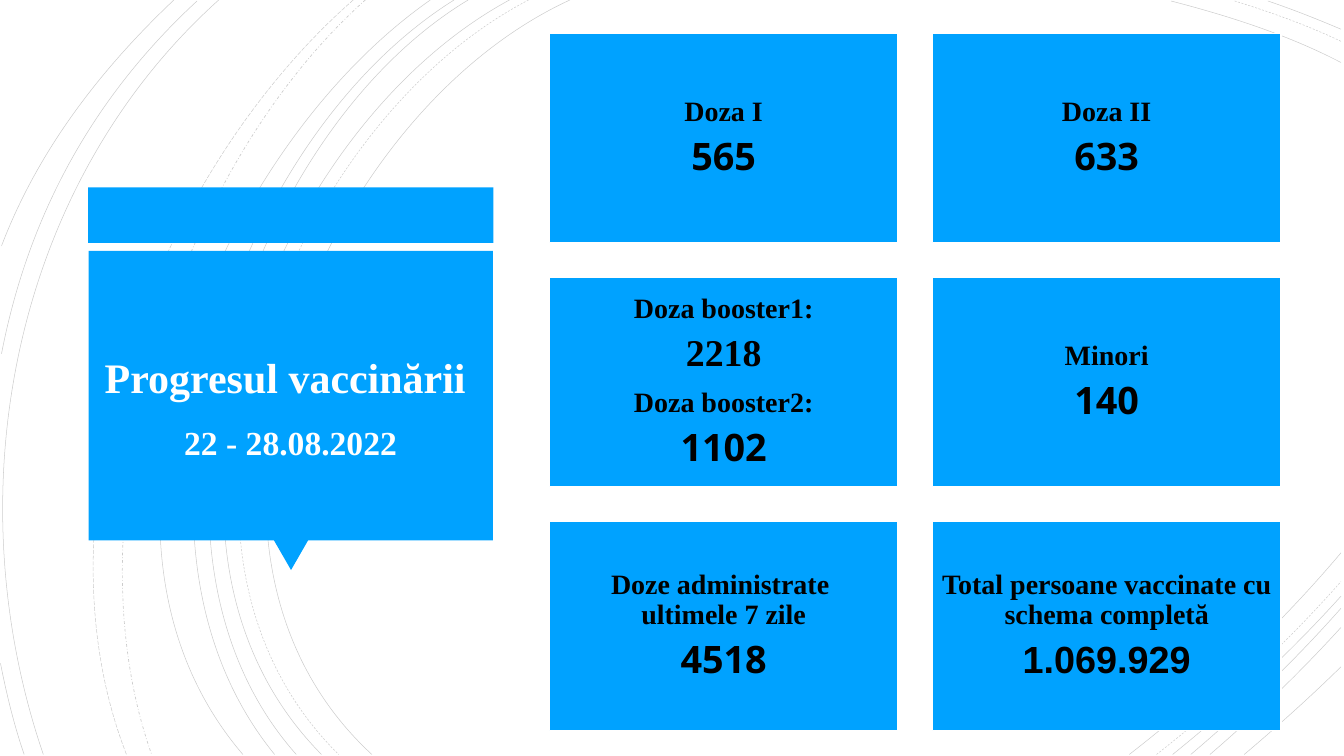
from lxml.etree import SubElement
from pptx import Presentation
from pptx.dml.color import RGBColor
from pptx.enum.dml import MSO_LINE
from pptx.enum.shapes import MSO_SHAPE
from pptx.enum.text import MSO_ANCHOR, PP_ALIGN
from pptx.oxml.ns import qn
from pptx.util import Inches, Pt

COLUMNS, ROWS = 26.67, 15
CELL = Inches(1)
COLORS = {"panel": "00A2FF", "paper": "FFFFFF", "ink": "000000"}
SERIF, SANS, PLAIN = "Times New Roman", "Open Sans", "Arial"
FOOT = 14.97
EDGE = 26.61

ARCS = {
    (MSO_LINE.SOLID, 0.75): [
        (11.31, 0, 6.3, 2.3, 2.86, 10.8, 7.38, FOOT),
        (EDGE, 1.24, 25.56, 0.69, 24.36, 0.31, 23.24, 0.02),
        (22.41, FOOT, 23.93, 13.79, 25.37, 12.44, EDGE, 10.97),
        (10.11, 0, 5.39, 2.55, 2.19, 10.74, 6.38, FOOT),
        (EDGE, 0.58, 26.14, 0.38, 25.66, 0.19, 25.16, 0.02),
        (23.27, FOOT, 24.46, 14.01, 25.59, 12.96, EDGE, 11.83),
        (9.29, 0, 4.87, 2.66, 2.19, 10.82, 5.88, FOOT),
        (23.63, FOOT, 24.68, 14.08, 25.69, 13.11, EDGE, 12.07),
        (9.01, 0, 4.61, 2.75, 1.94, 10.67, 5.45, FOOT),
        (24.01, FOOT, 24.93, 14.18, 25.8, 13.34, EDGE, 12.45),
        (8.54, 0, 4.34, 2.93, 1.06, 10.58, 4.82, FOOT),
        (24.69, FOOT, 25.34, 14.42, 25.99, 13.84, EDGE, 13.23),
        (4.34, 0, 0.22, 3.7, -0.91, 9.8, 0.86, FOOT),
        (3.91, 0.02, 1.85, 1.92, 0.56, 4.27, 0.03, 7.02),
        (0.01, 13.16, 0.13, 13.77, 0.28, 14.39, 0.48, FOOT),
        (3.45, 0, 1.99, 1.38, 0.75, 2.99, 0.03, 4.88),
    ],
    (MSO_LINE.DASH, 0.75): [
        (10.49, 0, 5.69, 2.49, 2.45, 10.75, 6.72, FOOT),
        (EDGE, 0.82, 25.94, 0.5, 25.21, 0.24, 24.5, 0.02),
        (22.95, FOOT, 24.25, 13.95, 25.5, 12.8, EDGE, 11.54),
    ],
    (MSO_LINE.DASH_DOT, 1): [(7.25, 0, 3.52, 3.33, 1.31, 10.18, 3.01, FOOT)],
    (MSO_LINE.LONG_DASH, 0.75): [(7.01, 0, 3.15, 3.38, 0.57, 9.98, 2.51, FOOT)],
}

CARDS = [
    [("Doza I", "565", SANS)],
    [("Doza II", "633", SANS)],
    [("Doza booster1:", "2218", SERIF), ("Doza booster2:", "1102", SANS)],
    [("Minori", "140", SANS)],
    [("Doze administrate \nultimele 7 zile", "4518", SANS)],
    [("Total persoane vaccinate cu schema completă", "1.069.929", PLAIN)],
]


def cells(*lengths):
    return [round(length * CELL) for length in lengths]


def apply(target, formats):
    for attribute, value in formats.items():
        setattr(target, attribute, value)


class Board:
    def __init__(self, slide):
        self.slide = slide
        self.colors = {key: RGBColor.from_string(value) for key, value in COLORS.items()}
        self.background = slide.background.fill
        self.background.solid()
        self.background.fore_color.rgb = self.colors["paper"]

    def arc(self, points, dash, weight):
        spots = cells(*points)
        start, *rest = zip(spots[::2], spots[1::2])
        builder = self.slide.shapes.build_freeform(*start)
        builder.add_line_segments(rest, close=False)
        curve = builder.convert_to_shape()
        curve.shadow.inherit = False
        curve.fill.background()
        curve.line.color.rgb = self.colors["ink"]
        apply(curve.line, {"dash_style": dash, "width": Pt(weight)})
        ink = curve.element.xpath(".//a:ln//a:srgbClr")[0]
        SubElement(ink, qn("a:alpha"), val="20000")
        segments = curve.element.xpath(".//a:lnTo")
        outline = segments[0].getparent()
        bend = SubElement(outline, qn("a:cubicBezTo"))
        for segment in segments:
            bend.append(segment[0])
            outline.remove(segment)

    def panel(self, place, kind=MSO_SHAPE.RECTANGLE, turn=0, border=0):
        panel = self.slide.shapes.add_shape(kind, *cells(*place))
        panel.shadow.inherit = False
        panel.rotation = turn
        panel.fill.solid()
        panel.fill.fore_color.rgb = self.colors["panel"]
        if border:
            panel.line.color.rgb = self.colors["paper"]
            panel.line.width = Pt(border)
        else:
            panel.line.fill.background()
        return panel

    def text_box(self, place):
        return self.slide.shapes.add_textbox(*cells(*place))

    def label(self, holder, paragraphs, color, inset, spacing, gap=0):
        frame = holder.text_frame
        sides = ("left", "top", "right", "bottom")
        apply(frame, {f"margin_{side}": Inches(inset) for side in sides})
        apply(frame, {"word_wrap": True, "vertical_anchor": MSO_ANCHOR.MIDDLE})
        for number, lines in enumerate(paragraphs):
            paragraph = frame.add_paragraph() if number else frame.paragraphs[0]
            apply(paragraph, {
                "alignment": PP_ALIGN.CENTER,
                "line_spacing": spacing,
                "space_after": Pt(round(gap * lines[0][2])),
            })
            for position, (words, font, size) in enumerate(lines):
                if position:
                    paragraph.add_line_break()
                run = paragraph.add_run()
                run.text = words
                apply(run.font, {"name": font, "size": Pt(size), "bold": True})
                run.font.color.rgb = self.colors[color]


def main():
    deck = Presentation()
    apply(deck, {"slide_width": round(COLUMNS * CELL), "slide_height": ROWS * CELL})
    board = Board(deck.slides.add_slide(deck.slide_layouts[6]))

    for (dash, weight), curves in ARCS.items():
        for points in curves:
            board.arc(points, dash, weight)

    board.panel((1.75, 3.72, 8.04, 1.1))
    board.panel((5.43, 10.71, 0.69, 0.6), MSO_SHAPE.ISOSCELES_TRIANGLE, turn=180)
    board.panel((1.76, 4.98, 8.02, 5.74))
    title = board.text_box((1.94, 5.14, 7.65, 5.37))
    heading = [("Progresul vaccinării ", SERIF, 60), ("22 - 28.08.2022", SERIF, 48)]
    board.label(title, [heading], "paper", inset=0.06, spacing=1.5)

    for index, doses in enumerate(CARDS):
        row, column = divmod(index, 2)
        place = (10.9 + 7.6 * column, 0.66 + 4.84 * row, 6.92, 4.15)
        card = board.panel(place, border=2)
        paragraphs = []
        for caption, count, count_font in doses:
            paragraphs.append([(line, SERIF, 40) for line in caption.split("\n")])
            paragraphs.append([(count, count_font, 54)])
        board.label(card, paragraphs, "ink", inset=0.17, spacing=0.9, gap=0.35)

    deck.save("out.pptx")


if __name__ == "__main__":
    main()
